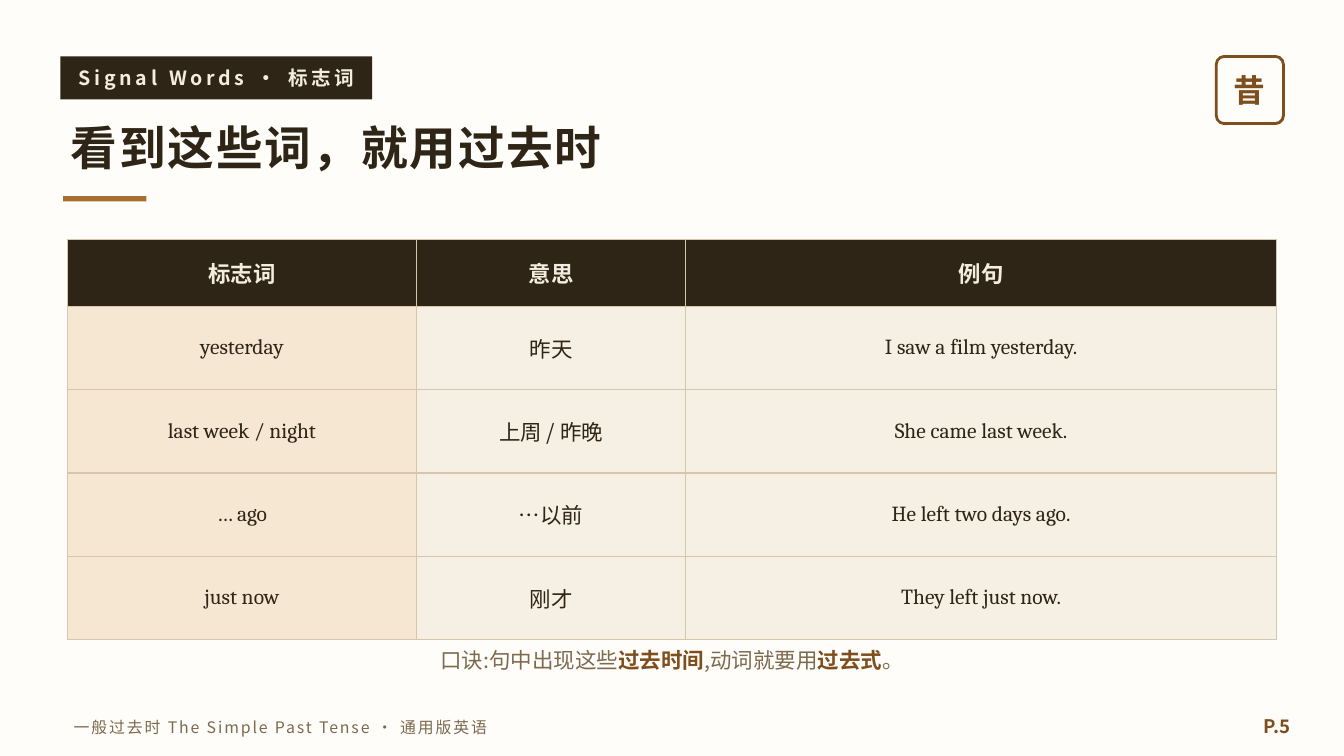
from lxml import etree
from pptx import Presentation
from pptx.dml.color import RGBColor
from pptx.enum.shapes import MSO_SHAPE
from pptx.enum.text import MSO_ANCHOR, PP_ALIGN
from pptx.oxml.ns import qn
from pptx.util import Pt

RECTANGLE, ROUNDED = MSO_SHAPE.RECTANGLE, MSO_SHAPE.ROUNDED_RECTANGLE
LEFT, CENTER, RIGHT = PP_ALIGN.LEFT, PP_ALIGN.CENTER, PP_ALIGN.RIGHT
MIDDLE = MSO_ANCHOR.MIDDLE

PAPER = RGBColor(0xFF, 0xFD, 0xF9)
INK = RGBColor(0x2F, 0x25, 0x16)
CREAM = RGBColor(0xF4, 0xEC, 0xE0)
OCHRE = RGBColor(0xA8, 0x70, 0x2F)
BROWN = RGBColor(0x7E, 0x4E, 0x1C)
MUTED = RGBColor(0x7C, 0x6A, 0x4F)
SAND = RGBColor(0xF6, 0xE7, 0xD2)
IVORY = RGBColor(0xF6, 0xEF, 0xE3)
BORDER = RGBColor(0xD8, 0xC6, 0xAA)
SANS, SERIF = "Noto Sans CJK SC", "Cambria"


def style_para(para, size, color, bold=False, align=CENTER, face=SANS, spacing=0):
    para.alignment = align
    font = para.font
    font.size, font.bold, font.name = Pt(size), bold, face
    font.color.rgb = color
    props = para._p.pPr.find(qn("a:defRPr"))
    etree.SubElement(props, qn("a:ea")).set("typeface", face)
    if spacing:
        props.set("spc", str(spacing * 100))


def add_text(left, top, width, height, text, size, color, **style):
    box = page.shapes.add_textbox(Pt(left), Pt(top), Pt(width), Pt(height))
    frame = box.text_frame
    frame.word_wrap = True
    frame.vertical_anchor = MIDDLE
    para = frame.paragraphs[0]
    para.text = text
    style_para(para, size, color, **style)
    return para


deck = Presentation()
deck.slide_width, deck.slide_height = Pt(720), Pt(405)
page = deck.slides.add_slide(deck.slide_layouts[6])
page.background.fill.solid()
page.background.fill.fore_color.rgb = PAPER

# Tag background and title underline
for left, top, width, height, color in [
    (32.4, 30.24, 167.04, 23.04, INK),
    (33.84, 105.12, 44.64, 2.88, OCHRE),
]:
    bar = page.shapes.add_shape(RECTANGLE, Pt(left), Pt(top), Pt(width), Pt(height))
    bar.shadow.inherit = False
    bar.fill.solid()
    bar.fill.fore_color.rgb = color
    bar.line.fill.background()

# Tag and title
add_text(32.4, 29.52, 167.04, 24.48, "Signal Words · 标志词", 10.5, CREAM, bold=True, spacing=2)
add_text(30.96, 56.16, 648, 44.64, "看到这些词，就用过去时", 25, INK,
         bold=True, align=LEFT, spacing=1)

# Seal
seal = page.shapes.add_shape(ROUNDED, Pt(651.6), Pt(30.24), Pt(36), Pt(36))
seal.adjustments[0] = 0.12
seal.shadow.inherit = False
seal.fill.background()
seal.line.color.rgb = BROWN
seal.line.width = Pt(1.5)
add_text(651.6, 29.52, 36, 37.44, "昔", 17, BROWN, bold=True)

# Signal word table
rows = [
    ("标志词", "意思", "例句"),
    ("yesterday", "昨天", "I saw a film yesterday."),
    ("last week / night", "上周 / 昨晚", "She came last week."),
    ("… ago", "…以前", "He left two days ago."),
    ("just now", "刚才", "They left just now."),
]
column_widths = [187.2, 144, 316.8]
row_heights = [36] + [44.64] * 4
table = page.shapes.add_table(len(rows), len(column_widths), Pt(36), Pt(128.16),
                              Pt(sum(column_widths)), Pt(sum(row_heights))).table
table.horz_banding = False
for column, width in zip(table.columns, column_widths):
    column.width = Pt(width)
for r, words in enumerate(rows):
    table.rows[r].height = Pt(row_heights[r])
    for c, text in enumerate(words):
        cell = table.cell(r, c)
        cell.vertical_anchor = MIDDLE
        cell_props = cell._tc.get_or_add_tcPr()
        for side in ("lnL", "lnR", "lnT", "lnB"):
            edge = etree.SubElement(cell_props, qn("a:" + side), w=str(Pt(0.75)))
            fill = etree.SubElement(edge, qn("a:solidFill"))
            etree.SubElement(fill, qn("a:srgbClr"), val=str(BORDER))
        cell.fill.solid()
        para = cell.text_frame.paragraphs[0]
        para.text = text
        if r == 0:
            cell.fill.fore_color.rgb = INK
            style_para(para, 12, CREAM, bold=True)
        else:
            cell.fill.fore_color.rgb = SAND if c == 0 else IVORY
            style_para(para, 11.5, INK, face=SANS if c == 1 else SERIF)

# Rhyme with its key words picked out
rhyme = add_text(36, 335.52, 648, 36, "口诀:句中出现这些", 11.5, MUTED)
for text, is_key in [("过去时间", True), (",动词就要用", False), ("过去式", True), ("。", False)]:
    span = rhyme.add_run()
    span.text = text
    if is_key:
        span.font.bold = True
        span.font.color.rgb = BROWN

# Footer
add_text(32.4, 378.72, 489.6, 21.6, "一般过去时 The Simple Past Tense · 通用版英语", 8.5, MUTED,
         align=LEFT, spacing=1)
add_text(655.2, 377.28, 43.2, 23.04, "P.5", 10, BROWN, bold=True, align=RIGHT)

deck.save("out.pptx")
